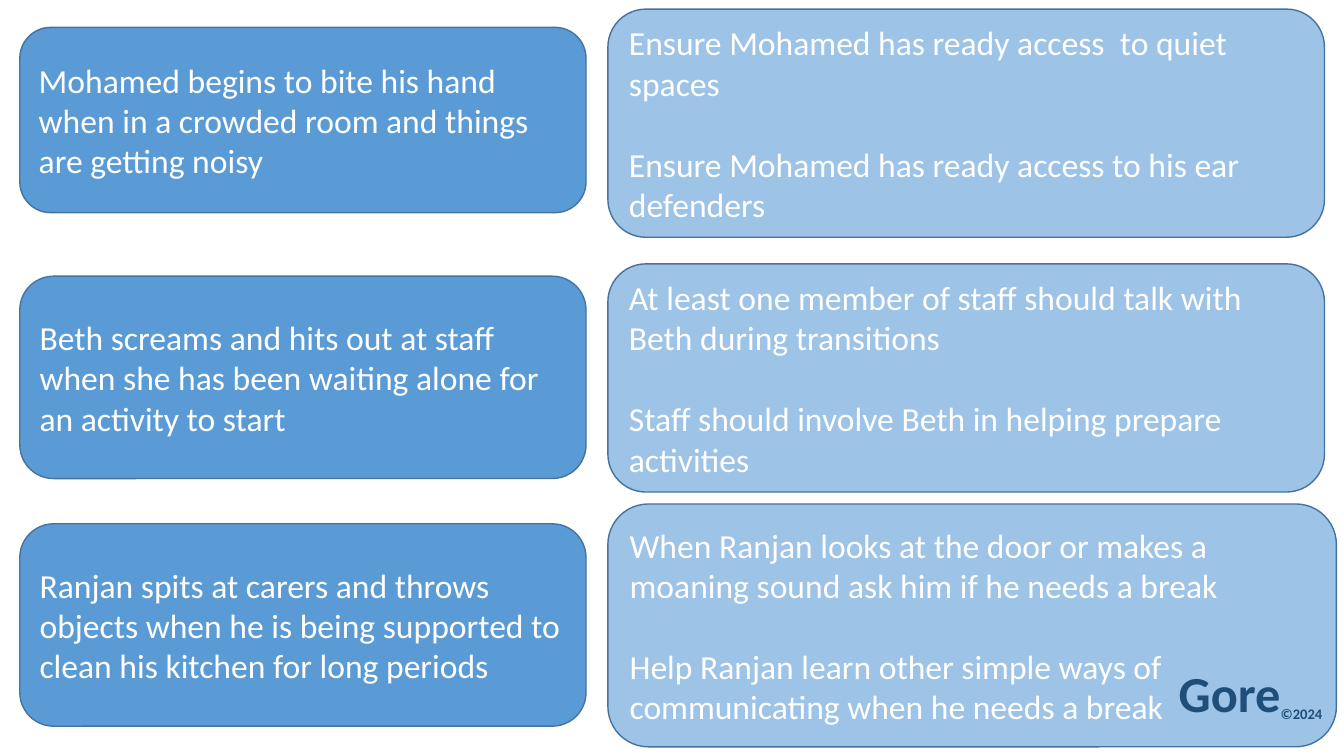
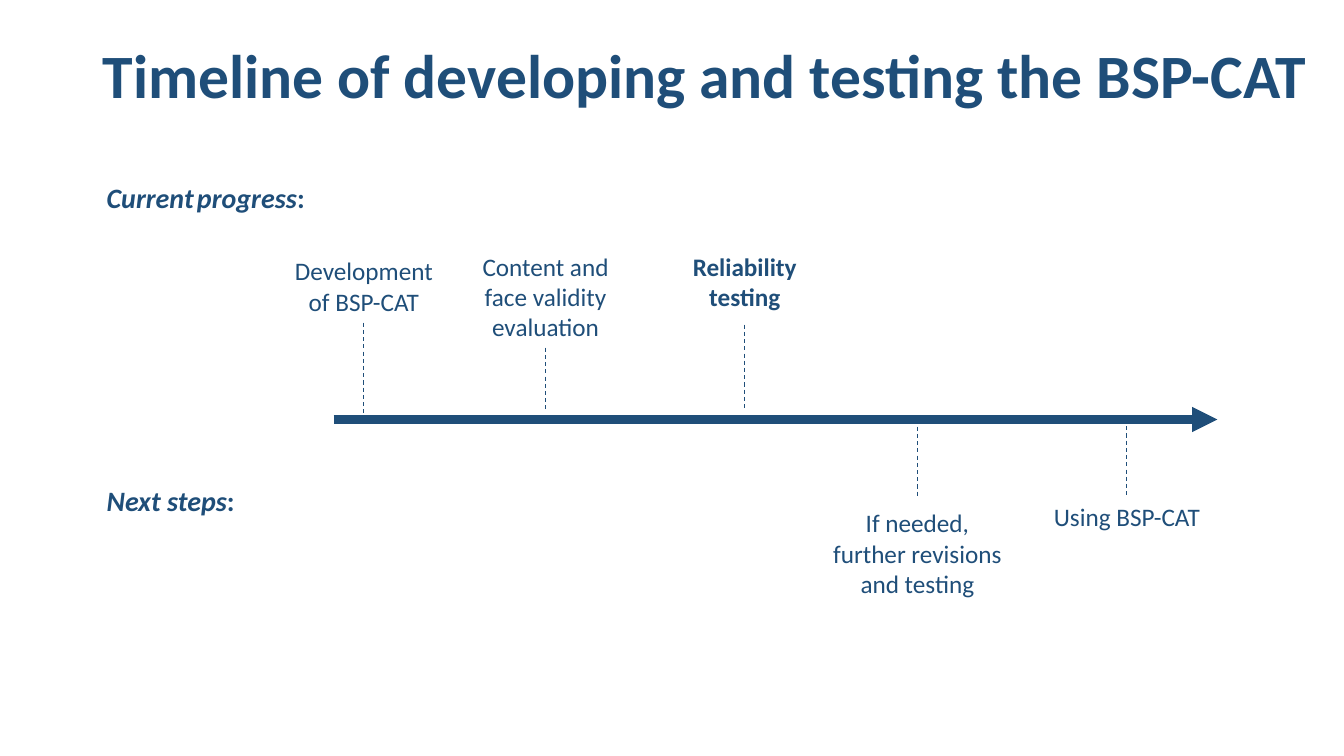
from dataclasses import dataclass

from lxml.etree import SubElement
from pptx import Presentation
from pptx.dml.color import RGBColor
from pptx.enum.dml import MSO_LINE_DASH_STYLE as Dash
from pptx.enum.shapes import MSO_CONNECTOR, MSO_SHAPE
from pptx.enum.text import MSO_ANCHOR, PP_ALIGN
from pptx.oxml.ns import qn
from pptx.util import Cm, Pt

FONT = "Calibri"
NAVY = RGBColor(0x1F, 0x4E, 0x79)
BLUE = RGBColor(0x5B, 0x9B, 0xD5)
PALE_BLUE = RGBColor(0x9D, 0xC3, 0xE6)
OUTLINE = RGBColor(0x43, 0x73, 0x9E)
WHITE = RGBColor(0xFF, 0xFF, 0xFF)

SLIDE_WIDTH, SLIDE_HEIGHT = 33.87, 19.05


@dataclass
class Card:
    top: float
    height: float
    paragraphs: list
    width: float


@dataclass
class Milestone:
    """Distances are measured from the start of the timeline arrow."""
    text: str
    across: float
    width: float
    label_top: float
    line_start: float
    line_end: float
    bold: bool = False


BEHAVIOUR_WIDTH, STRATEGY_WIDTH = 14.27, 18.06

BEHAVIOURS = [
    Card(0.69, 4.67, ["Mohamed begins to bite his hand when in a crowded room "
                      "and things are getting noisy"], BEHAVIOUR_WIDTH),
    Card(6.96, 5.1, ["Beth screams and hits out at staff when she has been "
                     "waiting alone for an activity to start"], BEHAVIOUR_WIDTH),
    Card(13.2, 5.1, ["Ranjan spits at carers and throws objects when he is being "
                     "supported to clean his kitchen for long periods"], BEHAVIOUR_WIDTH),
]
STRATEGIES = [
    Card(0.23, 5.75, ["Ensure Mohamed has ready access  to quiet spaces",
                      "Ensure Mohamed has ready access to his ear defenders"],
         STRATEGY_WIDTH),
    Card(6.65, 5.75, ["At least one member of staff should talk with Beth during transitions",
                      "Staff should involve Beth in helping prepare activities"],
         STRATEGY_WIDTH),
    Card(12.7, 6.12, ["When Ranjan looks at the door or makes a moaning sound "
                      "ask him if he needs a break",
                      "Help Ranjan learn other simple ways of communicating "
                      "when he needs a break"], 18.36),
]
MILESTONES = [
    Milestone("Development of BSP-CAT", 0.76, 4, -4.25, -2.44, -0.08),
    Milestone("Content and face validity evaluation", 5.34, 4.29, -4.37, -1.81, -0.26),
    Milestone("Reliability\ntesting", 10.36, 5.18, -4.37, -2.39, -0.26, True),
    Milestone("If needed, further revisions and testing", 14.71, 4.85, 2.1, 0, 1.98),
    Milestone("Using BSP-CAT", 19.99, 4.62, 1.93, 0.17, 1.93),
]


def style_paragraph(paragraph, size, color, bold=False, align=PP_ALIGN.LEFT):
    paragraph.alignment = align
    font = paragraph.font
    font.name, font.size, font.bold = FONT, Pt(size), bold
    font.color.rgb = color


def add_label(slide, left, top, width, height, text, size, bold=False, align=PP_ALIGN.LEFT):
    """Add navy text and return its first paragraph."""
    frame = slide.shapes.add_textbox(Cm(left), Cm(top), Cm(width), Cm(height)).text_frame
    frame.word_wrap = True
    frame.text = text
    for paragraph in frame.paragraphs:
        style_paragraph(paragraph, size, NAVY, bold, align)
    return frame.paragraphs[0]


def add_line(slide, start_x, start_y, end_x, end_y, weight):
    connector = slide.shapes.add_connector(
        MSO_CONNECTOR.STRAIGHT, Cm(start_x), Cm(start_y), Cm(end_x), Cm(end_y))
    connector.line.color.rgb = NAVY
    connector.line.width = Pt(weight)
    SubElement(connector._element.spPr, qn("a:effectLst"))
    return connector


def add_card_column(slide, left, cards, fill):
    for card in cards:
        shape = slide.shapes.add_shape(MSO_SHAPE.ROUNDED_RECTANGLE, Cm(left), Cm(card.top),
                                       Cm(card.width), Cm(card.height))
        shape.shadow.inherit = False
        shape.fill.solid()
        shape.fill.fore_color.rgb = fill
        shape.line.color.rgb = OUTLINE
        shape.line.width = Pt(1)
        frame = shape.text_frame
        frame.word_wrap = True
        frame.vertical_anchor = MSO_ANCHOR.MIDDLE
        frame.text = "\n".join(card.paragraphs)
        for index, paragraph in enumerate(frame.paragraphs):
            style_paragraph(paragraph, 24, WHITE)
            paragraph.space_before = Pt(29 if index else 0)


def add_credit(slide, left, top, width, height):
    paragraph = add_label(slide, left, top, width, height, "Gore", 36, True, PP_ALIGN.CENTER)
    paragraph.line_spacing = 1.07
    year = paragraph.add_run()
    year.text = "©2024"
    year.font.size = Pt(18)
    year._r.get_or_add_rPr().set("baseline", "-25000")


def add_section_heading(slide, left, top, width, words):
    """Write the words in italics, with narrow gaps and an upright colon."""
    paragraph = add_label(slide, left, top, width, 1.12, "", 20, True)
    for index, word in enumerate(words):
        if index:
            gap = paragraph.add_run()
            gap.text = " "
            gap.font.size, gap.font.bold = Pt(10), False
        run = paragraph.add_run()
        run.text = word
        run.font.italic = True
    paragraph.add_run().text = ":"


def add_timeline(slide, left, axis, width, milestones):
    arrow = add_line(slide, left, axis, left + width, axis, 6)
    SubElement(arrow.line._get_or_add_ln(), qn("a:tailEnd"), type="triangle")
    for milestone in milestones:
        center = left + milestone.across
        marker = add_line(slide, center, axis + milestone.line_start,
                          center, axis + milestone.line_end, 0.75)
        marker.line.dash_style = Dash.DASH
        add_label(slide, center - milestone.width / 2, axis + milestone.label_top,
                  milestone.width, 1.8, milestone.text, 18, milestone.bold, PP_ALIGN.CENTER)


def build_strategies_slide(slide):
    add_card_column(slide, 0.5, BEHAVIOURS, BLUE)
    add_card_column(slide, 15.32, STRATEGIES, PALE_BLUE)
    add_credit(slide, 29.18, 16.46, 4.67, 1.9)


def build_timeline_slide(slide):
    title = add_label(slide, 2.34, 1.02, 31.53, 3.68,
                      "Timeline of developing and testing the BSP-CAT", 44, True)
    title.line_spacing = 0.9
    add_section_heading(slide, 2.44, 4.42, 6.27, ["Current", "progress"])
    add_section_heading(slide, 2.44, 12.07, 6.73, ["Next steps"])
    add_timeline(slide, 8.41, 10.57, 22.27, MILESTONES)


def main():
    presentation = Presentation()
    presentation.slide_width = Cm(SLIDE_WIDTH)
    presentation.slide_height = Cm(SLIDE_HEIGHT)
    blank = presentation.slide_layouts[6]
    for build in (build_strategies_slide, build_timeline_slide):
        build(presentation.slides.add_slide(blank))
    presentation.save("out.pptx")


if __name__ == "__main__":
    main()
